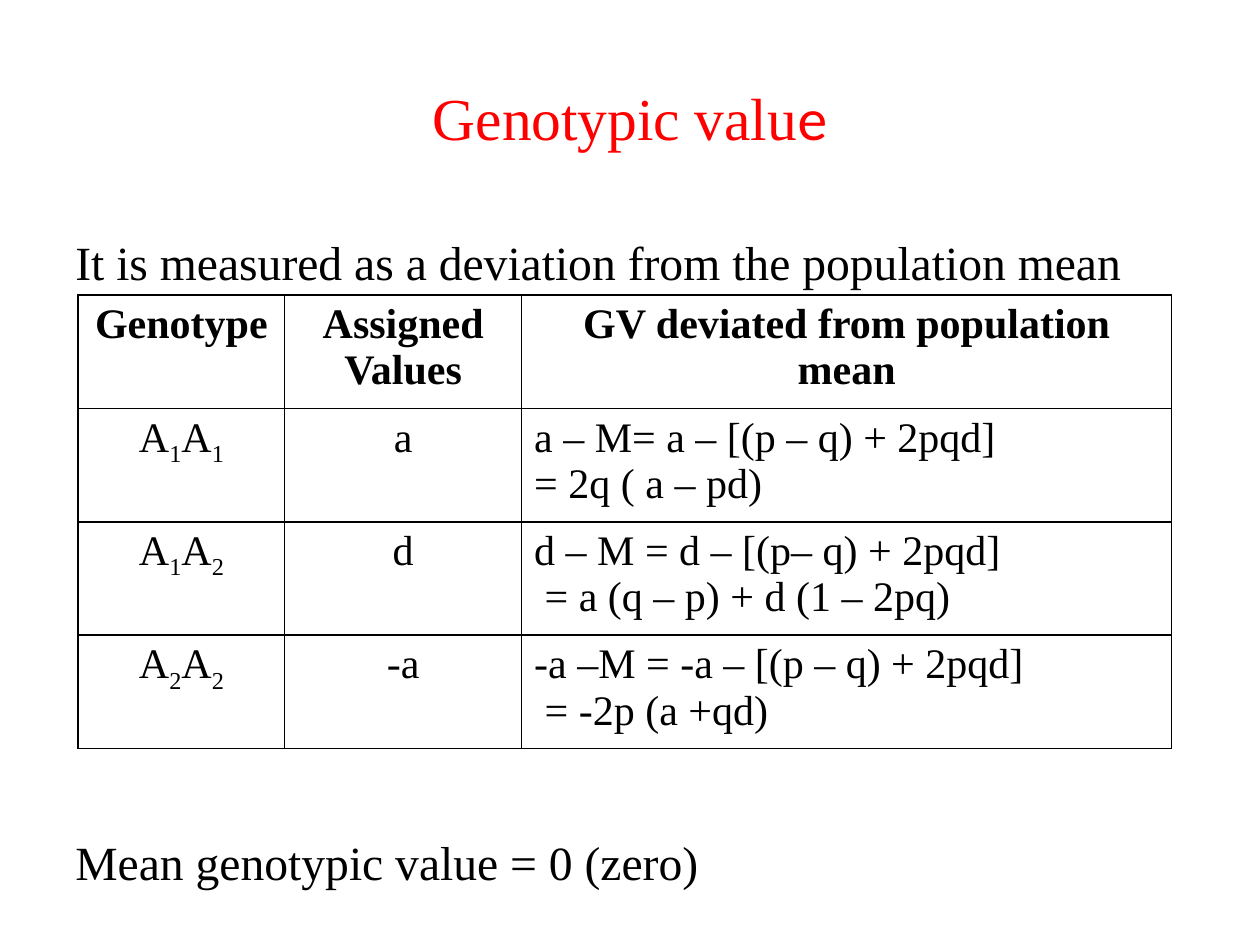
from lxml import etree
from pptx import Presentation
from pptx.dml.color import RGBColor
from pptx.enum.text import MSO_ANCHOR, PP_ALIGN
from pptx.oxml.ns import qn
from pptx.util import Inches, Pt

RED = RGBColor(0xFF, 0x00, 0x00)
BLACK = RGBColor(0x00, 0x00, 0x00)
SERIF = "Times New Roman"
SANS = "Calibri"
LEFT, CENTER, JUSTIFY = PP_ALIGN.LEFT, PP_ALIGN.CENTER, PP_ALIGN.JUSTIFY
MIDDLE = MSO_ANCHOR.MIDDLE

COLUMN_WIDTHS = (1.64, 1.88, 5.16)
ROW_HEIGHT = 0.8
HEADERS = ("Genotype", "Assigned Values", "GV deviated from population mean")
# Allele numbers, assigned value, lines of the deviation
GENOTYPES = (
    ("11", "a", ("a – M= a – [(p – q) + 2pqd]", "= 2q ( a – pd)")),
    ("12", "d", ("d – M = d – [(p– q) + 2pqd]", " = a (q – p) + d (1 – 2pq)")),
    ("22", "-a", ("-a –M = -a – [(p – q) + 2pqd]", " = -2p (a +qd)")),
)


def add_span(para, text, size, color=BLACK, font=SERIF, bold=False, subscript=False):
    span = para.add_run()
    span.text = text
    span.font.name = font
    span.font.size = Pt(size)
    span.font.bold = bold
    span.font.color.rgb = color
    if subscript:
        span.font._element.set("baseline", "-25000")


def add_box(page, left, top, width, height, align):
    """Add a wrapped text box and return its text frame."""
    frame = page.shapes.add_textbox(
        Inches(left), Inches(top), Inches(width), Inches(height)).text_frame
    frame.word_wrap = True
    frame.paragraphs[0].alignment = align
    return frame


def add_title(page):
    frame = add_box(page, 0.5, 0.3, 9, 1.25, CENTER)
    frame.vertical_anchor = MIDDLE
    add_span(frame.paragraphs[0], "Genotypic valu", 34, RED)
    add_span(frame.paragraphs[0], "e", 34, RED, SANS)


def add_statement(page, top, text):
    frame = add_box(page, 0.5, top, 9, 0.55, JUSTIFY)
    add_span(frame.paragraphs[0], text, 27.2)


def style_cell(cell):
    """Clear the fill and draw thin black borders."""
    properties = cell._tc.get_or_add_tcPr()
    for side in ("a:lnL", "a:lnR", "a:lnT", "a:lnB"):
        line = etree.SubElement(properties, qn(side), w=str(Pt(1)))
        fill = etree.SubElement(line, qn("a:solidFill"))
        etree.SubElement(fill, qn("a:srgbClr"), val=str(BLACK))
    cell.fill.background()


def fill_cell(cell, lines, align=CENTER, bold=False):
    frame = cell.text_frame
    for index, text in enumerate(lines):
        para = frame.add_paragraph() if index else frame.paragraphs[0]
        para.alignment = align
        add_span(para, text, 24, bold=bold)


def fill_genotype(cell, alleles):
    para = cell.text_frame.paragraphs[0]
    para.alignment = CENTER
    for number in alleles:
        add_span(para, "A", 24)
        add_span(para, number, 24, subscript=True)


def add_genotype_table(page):
    row_count = len(GENOTYPES) + 1
    table = page.shapes.add_table(
        row_count, len(COLUMN_WIDTHS), Inches(0.62), Inches(2.34),
        Inches(sum(COLUMN_WIDTHS)), Inches(ROW_HEIGHT * row_count)).table
    table.first_row = False
    table.horz_banding = False
    for column, width in zip(table.columns, COLUMN_WIDTHS):
        column.width = Inches(width)
    for cell in table.iter_cells():
        style_cell(cell)

    for index, header in enumerate(HEADERS):
        fill_cell(table.cell(0, index), [header], bold=True)
    for row, (alleles, value, deviation) in enumerate(GENOTYPES, start=1):
        fill_genotype(table.cell(row, 0), alleles)
        fill_cell(table.cell(row, 1), [value])
        fill_cell(table.cell(row, 2), deviation, LEFT)


def main():
    deck = Presentation()
    deck.slide_width, deck.slide_height = Inches(10), Inches(7.5)
    page = deck.slides.add_slide(deck.slide_layouts[6])

    add_title(page)
    add_statement(page, 1.8, "It is measured as a deviation from the population mean")
    add_genotype_table(page)
    add_statement(page, 6.56, "Mean genotypic value = 0 (zero)")

    deck.save("out.pptx")


if __name__ == "__main__":
    main()
